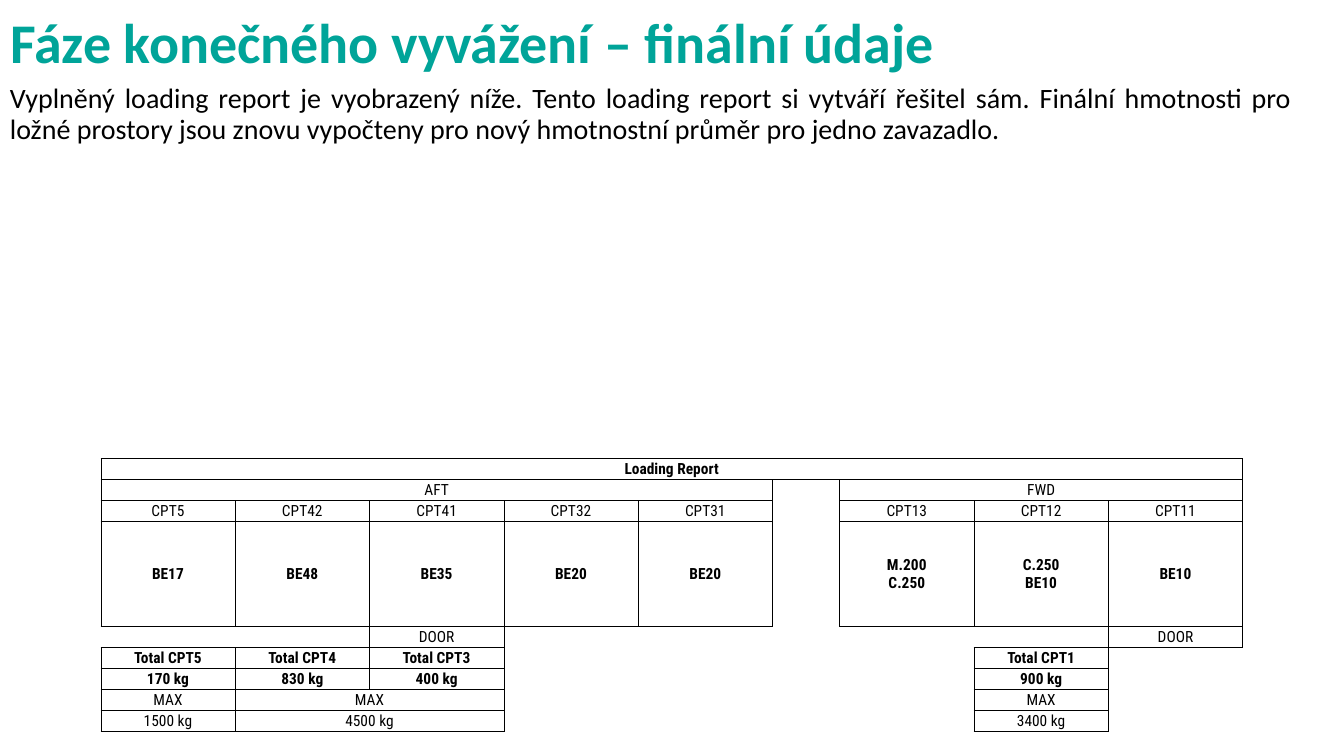
from dataclasses import dataclass

from lxml import etree
from pptx import Presentation
from pptx.dml.color import RGBColor
from pptx.enum.text import MSO_ANCHOR, MSO_AUTO_SIZE, PP_ALIGN
from pptx.oxml.ns import qn
from pptx.table import Table, _Cell
from pptx.text.text import TextFrame
from pptx.util import Inches, Pt

CENTER, JUSTIFY, LEFT = PP_ALIGN.CENTER, PP_ALIGN.JUSTIFY, PP_ALIGN.LEFT
TOP, MIDDLE, BOTTOM = MSO_ANCHOR.TOP, MSO_ANCHOR.MIDDLE, MSO_ANCHOR.BOTTOM
NO_AUTOFIT = MSO_AUTO_SIZE.NONE

SLIDE_WIDTH, SLIDE_HEIGHT = Inches(13.33), Inches(7.5)
TEXT_WIDTH = Inches(12.91)
TEAL, BLACK = "00A499", "000000"
REPORT_SIZE = 11

REPORT_LEFT, REPORT_TOP = Inches(1), Inches(4.55)
COLUMN = Inches(11.33) // 17
ROW = Inches(2.71) // 13
COLUMNS, ROWS, WIDE_COLUMN = 16, 13, 4
HOLD_ROWS = 5
SIDES = {"lnL": (0, -1), "lnR": (0, 1), "lnT": (-1, 0), "lnB": (1, 0)}


@dataclass(frozen=True)
class Block:
    """A bordered entry of the report, placed in grid rows and columns."""
    text: str
    row: int
    column: int
    columns: int = 2
    rows: int = 1
    bold: bool = False


@dataclass(frozen=True)
class Compartment:
    name: str
    load: str
    column: int
    columns: int = 2


@dataclass(frozen=True)
class Total:
    name: str
    weight: str
    column: int
    columns: int = 2


@dataclass(frozen=True)
class Limit:
    weight: str
    column: int
    columns: int = 2


COMPARTMENTS = [
    Compartment("CPT5", "BE17", 0),
    Compartment("CPT42", "BE48", 2),
    Compartment("CPT41", "BE35", WIDE_COLUMN, 1),
    Compartment("CPT32", "BE20", 5),
    Compartment("CPT31", "BE20", 7),
    Compartment("CPT13", "M.200\vC.250", 10),
    Compartment("CPT12", "C.250\vBE10", 12),
    Compartment("CPT11", "BE10", 14),
]
TOTALS = [
    Total("Total CPT5", "170 kg", 0),
    Total("Total CPT4", "830 kg", 2),
    Total("Total CPT3", "400 kg", WIDE_COLUMN, 1),
    Total("Total CPT1", "900 kg", 12),
]
LIMITS = [Limit("1500 kg", 0), Limit("4500 kg", 2, 3), Limit("3400 kg", 12)]


def report_blocks() -> list[Block]:
    blocks = [
        Block("Loading Report", 0, 0, COLUMNS, bold=True),
        Block("AFT", 1, 0, 9),
        Block("FWD", 1, 10, 6),
        Block("DOOR", 8, WIDE_COLUMN, 1),
        Block("DOOR", 8, 14),
    ]
    for hold in COMPARTMENTS:
        blocks += [Block(hold.name, 2, hold.column, hold.columns),
                   Block(hold.load, 3, hold.column, hold.columns, HOLD_ROWS, True)]
    for total in TOTALS:
        blocks += [Block(total.name, 9, total.column, total.columns, bold=True),
                   Block(total.weight, 10, total.column, total.columns, bold=True)]
    for limit in LIMITS:
        blocks += [Block("MAX", 11, limit.column, limit.columns),
                   Block(limit.weight, 12, limit.column, limit.columns)]
    return blocks


def color(value: str) -> RGBColor:
    return RGBColor.from_string(value)


def set_attributes(target: object, values: dict) -> None:
    for name, value in values.items():
        setattr(target, name, value)


def write(frame: TextFrame, text: str, font: dict, hue: str, paragraph_format: dict) -> None:
    frame.text = text
    for paragraph in frame.paragraphs:
        set_attributes(paragraph, paragraph_format)
        for run in paragraph.runs:
            set_attributes(run.font, font)
            run.font.color.rgb = color(hue)


def size_marks(cell: _Cell) -> None:
    """Give line breaks and empty paragraphs the report's text size."""
    size = str(REPORT_SIZE * 100)
    for paragraph in cell.text_frame.paragraphs:
        for line_break in paragraph._p.findall(qn("a:br")):
            etree.SubElement(line_break, qn("a:rPr"), sz=size)
        if not paragraph.runs:
            etree.SubElement(paragraph._p, qn("a:endParaRPr"), sz=size)


def draw_borders(cell: _Cell, row: int, column: int, covered: set) -> None:
    """Line every side that touches a block and clear the other sides."""
    properties = cell._tc.get_or_add_tcPr()
    for side, (down, across) in SIDES.items():
        line = etree.SubElement(properties, qn(f"a:{side}"), w=str(Pt(0.5)))
        if covered & {(row, column), (row + down, column + across)}:
            fill = etree.SubElement(line, qn("a:solidFill"))
            etree.SubElement(fill, qn("a:srgbClr"), val=BLACK)
        else:
            etree.SubElement(line, qn("a:noFill"))


def fill_block(table: Table, block: Block) -> None:
    cell = table.cell(block.row, block.column)
    if block.rows * block.columns > 1:
        cell.merge(table.cell(block.row + block.rows - 1, block.column + block.columns - 1))
    font = {"name": "Roboto Condensed", "size": Pt(REPORT_SIZE), "bold": block.bold}
    write(cell.text_frame, block.text, font, BLACK, {"alignment": CENTER})


def add_report(slide) -> None:
    width = COLUMN * (COLUMNS + 1)
    table = slide.shapes.add_table(
        ROWS, COLUMNS, REPORT_LEFT, REPORT_TOP, width, ROW * ROWS).table
    set_attributes(table, {"first_row": False, "horz_banding": False})
    for index, column in enumerate(table.columns):
        column.width = COLUMN * (2 if index == WIDE_COLUMN else 1)
    for row in table.rows:
        row.height = ROW

    blocks = report_blocks()
    covered = {(row, column) for block in blocks
               for row in range(block.row, block.row + block.rows)
               for column in range(block.column, block.column + block.columns)}
    for block in blocks:
        fill_block(table, block)
    cell_format = {"margin_left": Inches(0.01), "margin_right": Inches(0.01),
                   "margin_top": Inches(0.01), "margin_bottom": 0,
                   "vertical_anchor": MIDDLE}
    for row in range(ROWS):
        for column in range(COLUMNS):
            cell = table.cell(row, column)
            set_attributes(cell, cell_format)
            size_marks(cell)
            draw_borders(cell, row, column, covered)
            cell.fill.background()


def main() -> None:
    presentation = Presentation()
    set_attributes(presentation, {"slide_width": SLIDE_WIDTH, "slide_height": SLIDE_HEIGHT})
    slide = presentation.slides.add_slide(presentation.slide_layouts[5])

    title = slide.shapes.title
    set_attributes(title, {"left": 0, "top": Inches(0.01),
                           "width": TEXT_WIDTH, "height": Inches(0.79)})
    frame_format = {"word_wrap": True, "auto_size": NO_AUTOFIT}
    set_attributes(title.text_frame, frame_format | {"vertical_anchor": BOTTOM})
    write(title.text_frame, "Fáze konečného vyvážení – finální údaje",
          {"name": "Calibri", "size": Pt(40), "bold": True}, TEAL,
          {"alignment": LEFT, "line_spacing": 0.9})

    explanation = slide.shapes.add_textbox(0, Inches(0.79), TEXT_WIDTH, Inches(4.61))
    set_attributes(explanation.text_frame, frame_format | {"vertical_anchor": TOP})
    write(explanation.text_frame,
          "Vyplněný loading report je vyobrazený níže. Tento loading report si vytváří "
          "řešitel sám. Finální hmotnosti pro ložné prostory jsou znovu vypočteny pro "
          "nový hmotnostní průměr pro jedno zavazadlo.",
          {"name": "Calibri", "size": Pt(20)}, BLACK,
          {"alignment": JUSTIFY, "line_spacing": 0.9, "space_before": Pt(10)})

    add_report(slide)
    presentation.save("out.pptx")


if __name__ == "__main__":
    main()
